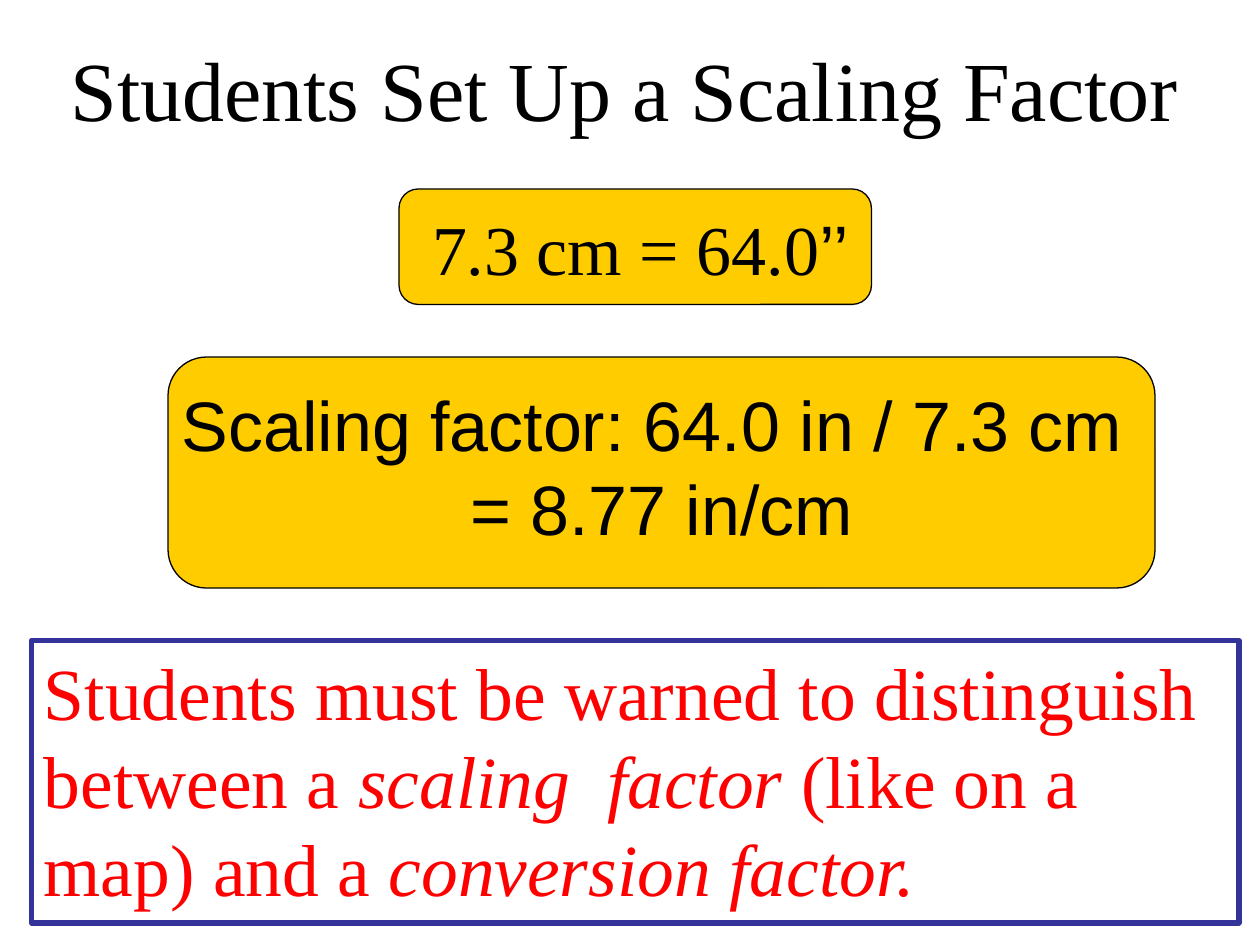
import pptx
import pptx.util
import pptx.dml.color
import pptx.enum.shapes
import pptx.enum.text

COLORS = {"ink": "000000", "panel": "FFCC00", "border": "333399", "warning": "FF0000"}
SERIF, SANS = "Times New Roman", "Arial"
COLS, ROWS = 120, 90
SHAPES = pptx.enum.shapes.MSO_SHAPE
ALIGN = pptx.enum.text.PP_ALIGN

prs = pptx.Presentation()
prs.slide_width = pptx.util.Inches(10)
prs.slide_height = pptx.util.Inches(7.5)


def rgb(name):
    return pptx.dml.color.RGBColor.from_string(COLORS[name])


def grid(box):
    """Turn left, top, width, height in grid cells into slide lengths."""
    units = (prs.slide_width / COLS, prs.slide_height / ROWS) * 2
    return [round(n * unit) for n, unit in zip(box, units)]


def write(s, runs, size, color, align):
    """Fill a shape with one paragraph of (text, format values) runs."""
    tf = s.text_frame
    tf.word_wrap = True
    tf.vertical_anchor = pptx.enum.text.MSO_ANCHOR.TOP
    p = tf.paragraphs[0]
    p.alignment = align
    for text, values in runs:
        r = p.add_run()
        r.text = text
        r.font.color.rgb = rgb(color)
        for key, value in {"size": pptx.util.Pt(size), "name": SERIF, **values}.items():
            setattr(r.font, key, value)


def add_text(slide, box, runs, size):
    s = slide.shapes.add_textbox(*grid(box))
    write(s, runs, size, "ink", ALIGN.CENTER)


def add_frame(slide, box, kind, line, weight, fill=None):
    s = slide.shapes.add_shape(kind, *grid(box))
    s.shadow.inherit = False
    s.line.color.rgb = rgb(line)
    s.line.width = pptx.util.Pt(weight)
    if fill:
        s.fill.solid()
        s.fill.fore_color.rgb = rgb(fill)
    else:
        s.fill.background()
    return s


def add_panel(slide, box, text_box, runs):
    """Draw a rounded panel; text_box is relative to the panel's corner."""
    add_frame(slide, box, SHAPES.ROUNDED_RECTANGLE, "ink", 0.75, "panel")
    left, top, width, height = text_box
    add_text(slide, (box[0] + left, box[1] + top, width, height), runs, 40)


def add_warning(slide, box, runs):
    s = add_frame(slide, box, SHAPES.RECTANGLE, "border", 3)
    write(s, runs, 42, "warning", ALIGN.LEFT)


def main():
    slide = prs.slides.add_slide(prs.slide_layouts[6])
    add_text(slide, (2, 3, 115, 10.8), [("Students Set Up a Scaling Factor", {})], 48)
    add_panel(slide, (38, 18, 45, 11), (-2, 1, 50, 9.2),
              [("7.3 cm = 64.0", {}), ("’’", {"name": SANS})])
    add_panel(slide, (16, 34, 94, 22), (0, 1.75, 94, 17.2),
              [("Scaling factor: 64.0 in / 7.3 cm  = 8.77 in/cm", {"name": SANS})])
    add_warning(slide, (3, 61, 115, 26.9), [
        ("Students must be warned to distinguish between a ", {}),
        ("scaling  factor", {"italic": True}),
        (" (like on a map) and a ", {}),
        ("conversion factor.", {"italic": True}),
    ])
    prs.save("out.pptx")


if __name__ == "__main__":
    main()
